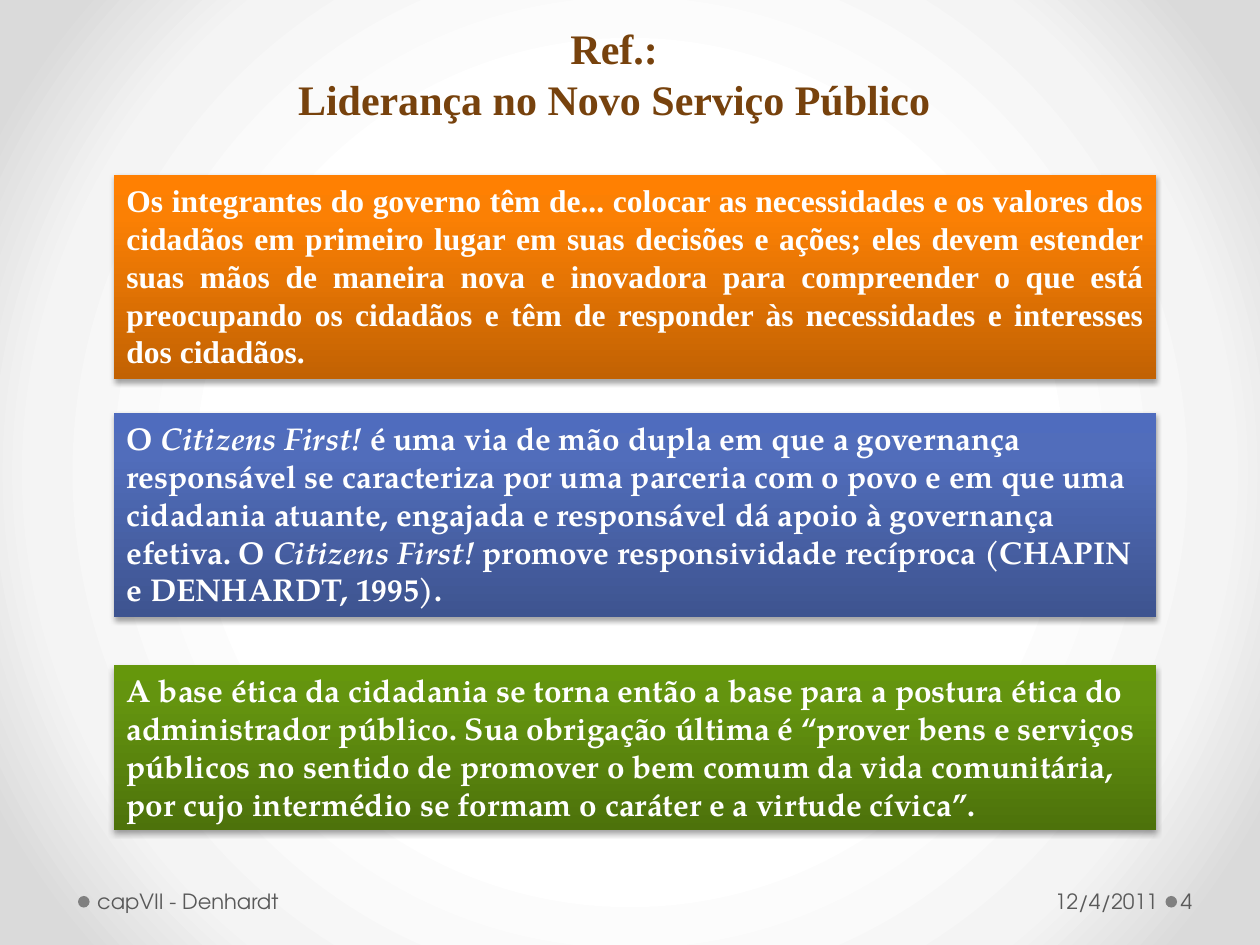
from pptx import Presentation
from pptx.dml.color import RGBColor
from pptx.enum.shapes import MSO_SHAPE
from pptx.enum.text import MSO_ANCHOR, PP_ALIGN
from pptx.oxml import parse_xml
from pptx.oxml.ns import nsdecls, qn
from pptx.util import Pt

SERIF, BOOK, SANS = "Times New Roman", "TeX Gyre Pagella", "TeX Gyre Adventor"

# Content: runs are (text, italic)
TITLE = ["Ref.:", "Liderança no Novo Serviço Público"]
PANELS = [  # top, height, font, alignment, gradient stops, runs
    (100, 116.6, SERIF, PP_ALIGN.JUSTIFY,
     [(0, "C26203"), (80, "FB8004"), (100, "FF8002")],
     [("Os integrantes do governo têm de... colocar as necessidades e os valores dos "
       "cidadãos em primeiro lugar em suas decisões e ações; eles devem estender suas "
       "mãos de maneira nova e inovadora para compreender o que está preocupando os "
       "cidadãos e têm de responder às necessidades e interesses dos cidadãos.", False)]),
    (236, 116.6, BOOK, PP_ALIGN.LEFT,
     [(0, "3E5490"), (80, "516DBB"), (100, "4F6CBE")],
     [("O ", False), ("Citizens First!", True),
      (" é uma via de mão dupla em que a governança responsável se caracteriza por uma "
       "parceria com o povo e em que uma cidadania atuante, engajada e responsável dá "
       "apoio à governança efetiva. O ", False),
      ("Citizens First!", True),
      (" promove responsividade recíproca (CHAPIN e DENHARDT, 1995).", False)]),
    (380, 94.5, BOOK, PP_ALIGN.LEFT,
     [(0, "4D720B"), (80, "64940F"), (100, "65970C")],
     [("A base ética da cidadania se torna então a base para a postura ética do "
       "administrador público. Sua obrigação última é “prover bens e serviços públicos "
       "no sentido de promover o bem comum da vida comunitária, por cujo intermédio se "
       "formam o caráter e a virtude cívica”.", False)]),
]
FOOTER = [  # text, left, width, left inset, right inset, alignment
    ("12/4/2011", 501, 164.3, 7.2, 3.6, PP_ALIGN.RIGHT),
    ("capVII - Denhardt", 52, 224, 3.6, 7.2, PP_ALIGN.LEFT),
    ("4", 672.5, 44, 2.2, 3.6, PP_ALIGN.LEFT),
]
DOT_LEFTS = [666, 44.6]
BACKDROP = [(50, "FFFFFF"), (76, "F4F4F4"), (92, "DADADA")]
UPWARD = '<a:lin ang="16200000" scaled="0"/>'
RADIAL = ('<a:path path="circle"><a:fillToRect l="50000" t="50000" '
          'r="50000" b="50000"/></a:path>')


def rgb(value):
    return RGBColor.from_string(value)


def set_gradient(fill, parent, stops, direction):
    fill.solid()
    gs = "".join(f'<a:gs pos="{pos * 1000}"><a:srgbClr val="{color}"/></a:gs>'
                 for pos, color in stops)
    parent.replace(parent.find(qn("a:solidFill")), parse_xml(
        f'<a:gradFill {nsdecls("a")} rotWithShape="1"><a:gsLst>{gs}</a:gsLst>'
        f'{direction}</a:gradFill>'))


def add_shadow(sp):
    sp.shadow.inherit = False
    sp._element.spPr.find(qn("a:effectLst")).append(parse_xml(
        f'<a:outerShdw {nsdecls("a")} blurRad="{Pt(3.1)}" dist="{Pt(1.8)}" '
        'dir="5400000" rotWithShape="0"><a:srgbClr val="000000">'
        '<a:alpha val="35000"/></a:srgbClr></a:outerShdw>'))


def setup_frame(sp, anchor, left=7.2, right=7.2):
    tf = sp.text_frame
    tf.word_wrap = True
    tf.vertical_anchor = anchor
    tf.margin_left, tf.margin_right = Pt(left), Pt(right)
    tf.margin_top = tf.margin_bottom = Pt(3.6)
    return tf


def add_run(p, text, font, size, color, bold=False, italic=False):
    r = p.add_run()
    r.text = text
    r.font.name, r.font.size = font, Pt(size)
    r.font.bold, r.font.italic = bold, italic
    r.font.color.rgb = rgb(color)


prs = Presentation()
prs.slide_width, prs.slide_height = Pt(720), Pt(540)
s = prs.slides.add_slide(prs.slide_layouts[6])

# Background
fill = s.background.fill
fill.solid()
set_gradient(fill, s._element.find(".//" + qn("p:bgPr")), BACKDROP, RADIAL)

# Footer
for left in DOT_LEFTS:
    sp = s.shapes.add_shape(MSO_SHAPE.OVAL, Pt(left), Pt(512), Pt(6.6), Pt(6.6))
    sp.shadow.inherit = False
    sp.fill.solid()
    sp.fill.fore_color.rgb = rgb("808080")
    sp.line.fill.background()
for text, left, width, inset_l, inset_r, align in FOOTER:
    sp = s.shapes.add_textbox(Pt(left), Pt(500.4), Pt(width), Pt(28.8))
    p = setup_frame(sp, MSO_ANCHOR.MIDDLE, inset_l, inset_r).paragraphs[0]
    p.alignment = align
    add_run(p, text, SANS, 12, "595959")

# Title
sp = s.shapes.add_textbox(Pt(113), Pt(9.5), Pt(476), Pt(65.4))
tf = setup_frame(sp, MSO_ANCHOR.TOP)
for i, text in enumerate(TITLE):
    p = tf.add_paragraph() if i else tf.paragraphs[0]
    p.alignment = PP_ALIGN.CENTER
    add_run(p, text, SERIF, 24, "77420D", bold=True)

# Panels
for top, height, font, align, stops, runs in PANELS:
    sp = s.shapes.add_shape(MSO_SHAPE.RECTANGLE, Pt(65.2), Pt(top), Pt(595.5), Pt(height))
    set_gradient(sp.fill, sp._element.spPr, stops, UPWARD)
    sp.line.fill.background()
    add_shadow(sp)
    p = setup_frame(sp, MSO_ANCHOR.TOP).paragraphs[0]
    p.alignment = align
    for text, italic in runs:
        add_run(p, text, font, 18, "FFFFFF", bold=True, italic=italic)

prs.save("out.pptx")
